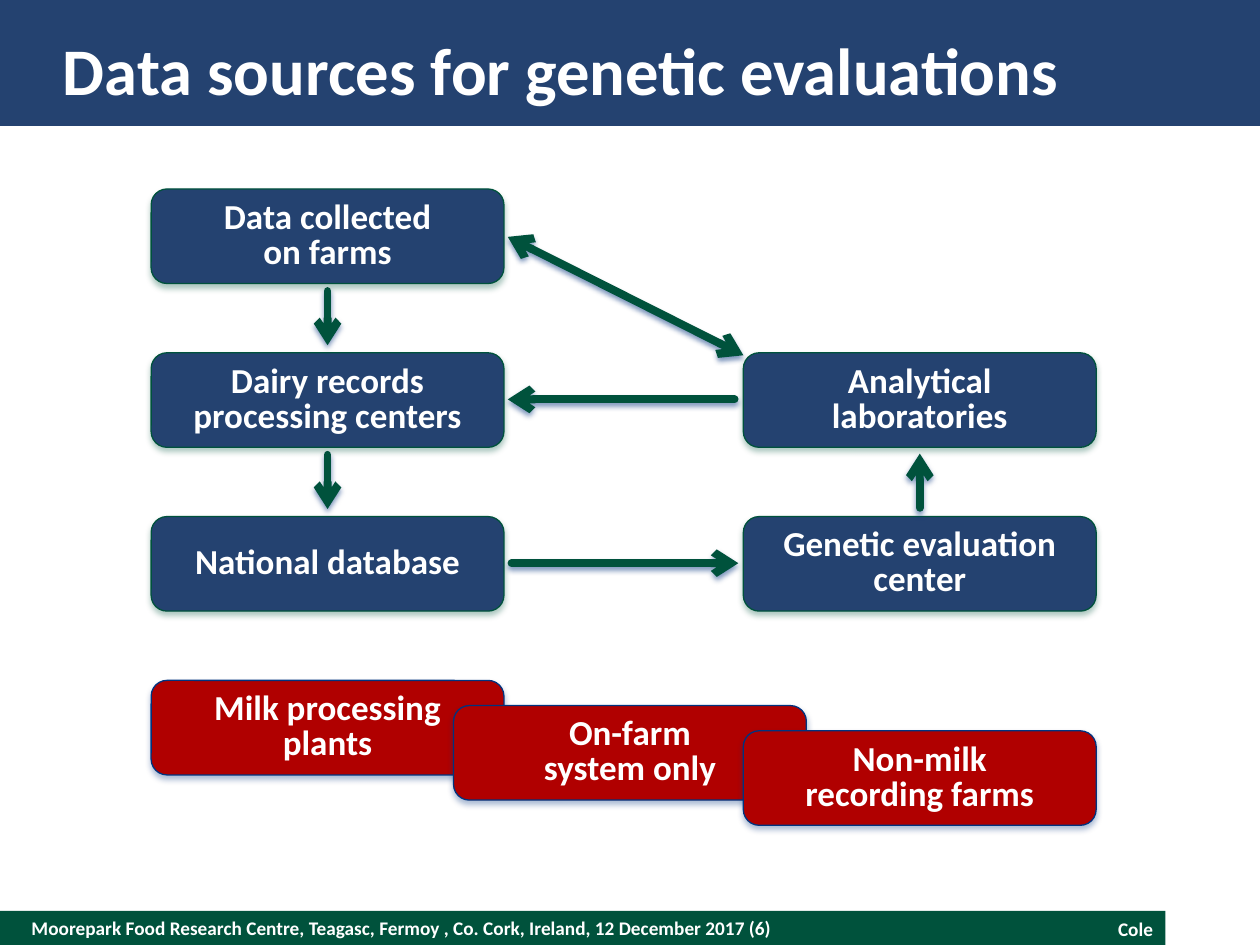
from dataclasses import dataclass

from lxml.etree import SubElement
from pptx import Presentation
from pptx.dml.color import RGBColor
from pptx.enum.shapes import MSO_CONNECTOR, MSO_SHAPE
from pptx.enum.text import MSO_ANCHOR, PP_ALIGN
from pptx.oxml.ns import qn
from pptx.util import Inches, Pt


@dataclass(frozen=True)
class Theme:
    font: str = "Calibri"
    white: str = "FFFFFF"
    navy: str = "244270"
    green: str = "00523C"
    red: str = "B00000"
    blue: str = "00337F"
    green_shadow: str = "00563F"
    title_size: int = 38
    box_size: int = 20
    footer_size: int = 11
    outline: float = 0.75
    arrow: float = 4.5


THEME = Theme()
BOX_WIDTH, BOX_HEIGHT = 2.8, 0.75
LEFT, RIGHT = 1.2, 5.9
ROWS = [1.5 + 1.3 * row for row in range(3)]


def format_text(text_frame, lines, size, alignment, margin, line_spacing=None):
    text_frame.word_wrap = True
    text_frame.vertical_anchor = MSO_ANCHOR.MIDDLE
    text_frame.margin_left = text_frame.margin_right = Inches(margin)
    text_frame.margin_top = text_frame.margin_bottom = Inches(margin)
    text_frame.text = "\n".join(lines)
    for paragraph in text_frame.paragraphs:
        paragraph.alignment = alignment
        if line_spacing:
            paragraph.line_spacing = Pt(line_spacing)
        for run in paragraph.runs:
            run.font.name = THEME.font
            run.font.size = Pt(size)
            run.font.bold = True
            run.font.color.rgb = RGBColor.from_string(THEME.white)


def add_shadow(properties, color, opacity, blur, distance):
    effects = properties.find(qn("a:effectLst"))
    if effects is None:
        effects = SubElement(properties, qn("a:effectLst"))
    shadow = SubElement(effects, qn("a:outerShdw"), blurRad=str(Pt(blur)),
                        dist=str(Pt(distance)), dir="5400000", rotWithShape="0")
    shade = SubElement(shadow, qn("a:srgbClr"), val=color)
    SubElement(shade, qn("a:alpha"), val=str(opacity * 1000))


def add_filled_shape(slide, preset, left, top, width, height, color):
    shape = slide.shapes.add_shape(
        preset, Inches(left), Inches(top), Inches(width), Inches(height))
    shape.fill.solid()
    shape.fill.fore_color.rgb = RGBColor.from_string(color)
    shape.line.fill.background()
    shape.shadow.inherit = False
    return shape


def add_label(slide, left, top, width, height, text, size, alignment=PP_ALIGN.LEFT, margin=0):
    label = slide.shapes.add_textbox(
        Inches(left), Inches(top), Inches(width), Inches(height))
    format_text(label.text_frame, [text], size, alignment, margin)


def add_box(slide, left, top, lines, fill, outline, shadow):
    box = add_filled_shape(
        slide, MSO_SHAPE.ROUNDED_RECTANGLE, left, top, BOX_WIDTH, BOX_HEIGHT, fill)
    box.line.color.rgb = RGBColor.from_string(outline)
    box.line.width = Pt(THEME.outline)
    add_shadow(box._element.spPr, shadow, 32, 3.5, 2.2)
    format_text(box.text_frame, lines, THEME.box_size, PP_ALIGN.CENTER, 0.1, THEME.box_size)


def add_arrow(slide, start, end, both_ends=False):
    connector = slide.shapes.add_connector(
        MSO_CONNECTOR.STRAIGHT, *map(Inches, start + end))
    connector.line.color.rgb = RGBColor.from_string(THEME.green)
    connector.line.width = Pt(THEME.arrow)
    properties = connector._element.spPr
    line = properties.find(qn("a:ln"))
    line.set("cap", "rnd")
    if both_ends:
        SubElement(line, qn("a:headEnd"), type="arrow")
    SubElement(line, qn("a:tailEnd"), type="arrow")
    add_shadow(properties, THEME.blue, 50, 3, 2)


def add_frame(slide):
    add_filled_shape(slide, MSO_SHAPE.RECTANGLE, 0, 7.23, 9.25, 0.27, THEME.green)
    add_filled_shape(slide, MSO_SHAPE.RECTANGLE, 0, 0, 10, 1, THEME.navy)
    add_label(slide, 0.25, 7.23, 6.5, 0.27,
              "Moorepark Food Research Centre, Teagasc, Fermoy , Co. Cork, Ireland, "
              "12 December 2017 (6)", THEME.footer_size)
    add_label(slide, 7.25, 7.23, 2, 0.29, "Cole", THEME.footer_size, PP_ALIGN.RIGHT, 0.1)
    add_label(slide, 0.5, 0.2, 9, 0.7, "Data sources for genetic evaluations",
              THEME.title_size)


def add_data_flow(slide):
    boxes = [
        (LEFT, ROWS[0], ["Data collected", "on farms"]),
        (LEFT, ROWS[1], ["Dairy records", "processing centers"]),
        (RIGHT, ROWS[1], ["Analytical laboratories"]),
        (RIGHT, ROWS[2], ["Genetic evaluation", "center"]),
        (LEFT, ROWS[2], ["National database"]),
    ]
    for left, top, lines in boxes:
        add_box(slide, left, top, lines, THEME.navy, THEME.green, THEME.green_shadow)

    left_center, right_center = LEFT + BOX_WIDTH / 2, RIGHT + BOX_WIDTH / 2
    add_arrow(slide, (4.03, 1.88), (RIGHT, 2.82), both_ends=True)
    add_arrow(slide, (4.06, 4.47), (5.86, 4.47))
    add_arrow(slide, (5.83, 3.17), (4.03, 3.17))
    for top in ROWS[:2]:
        add_arrow(slide, (left_center, top + 0.81), (left_center, top + 1.24))
    add_arrow(slide, (right_center, 4.03), (right_center, 3.6))


def add_other_sources(slide):
    boxes = [
        (LEFT, ["Milk processing", "plants"]),
        (3.6, ["On-farm", "system only"]),
        (RIGHT, ["Non-milk", "recording farms"]),
    ]
    for index, (left, lines) in enumerate(boxes):
        add_box(slide, left, 5.4 + 0.2 * index, lines, THEME.red, THEME.blue, THEME.blue)


def main():
    presentation = Presentation()
    presentation.slide_width = Inches(10)
    presentation.slide_height = Inches(7.5)
    slide = presentation.slides.add_slide(presentation.slide_layouts[6])
    add_frame(slide)
    add_other_sources(slide)
    add_data_flow(slide)
    presentation.save("out.pptx")


if __name__ == "__main__":
    main()
